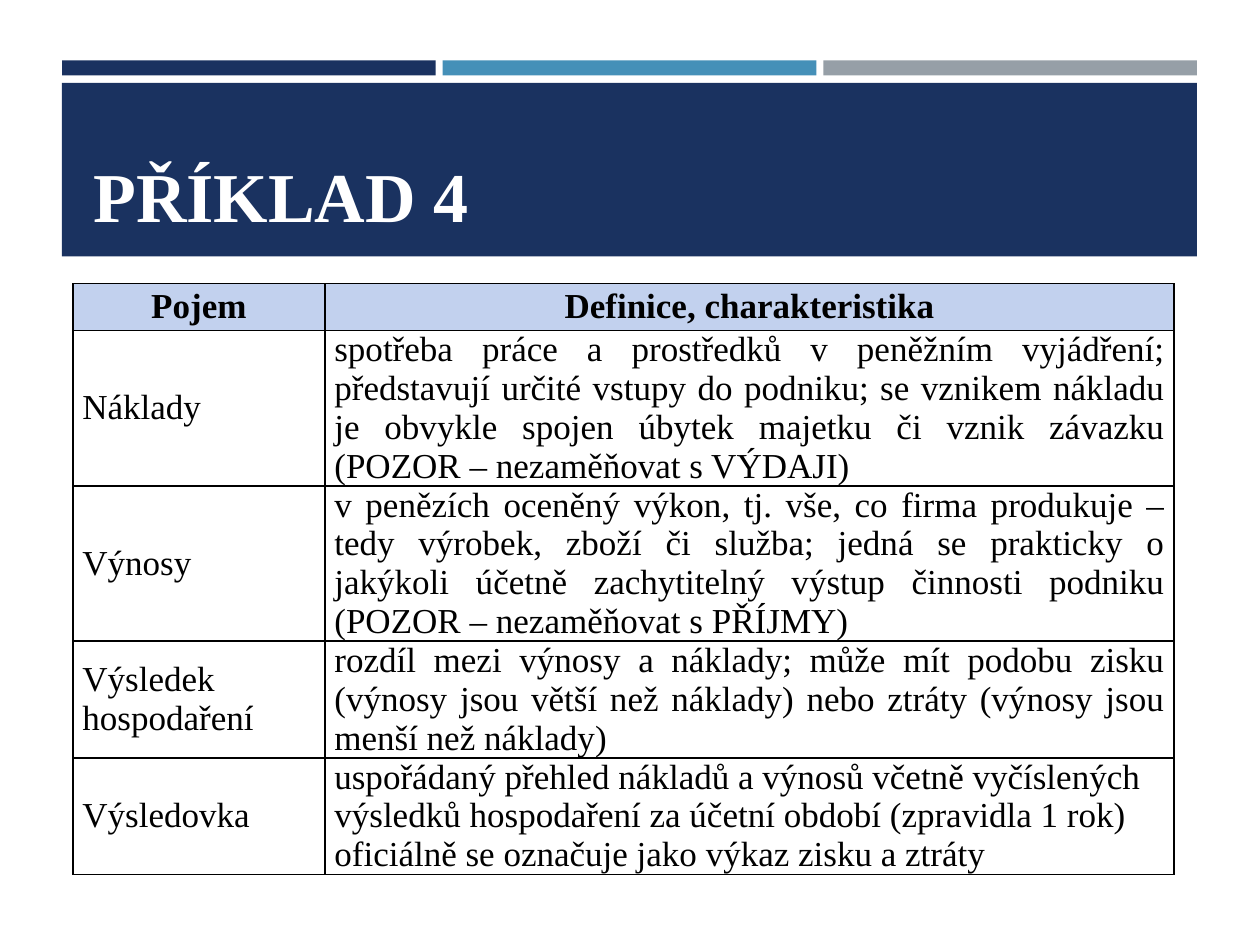
from pptx import Presentation
from pptx.util import Cm, Pt
from pptx.dml.color import RGBColor
from pptx.enum.shapes import MSO_SHAPE
from pptx.enum.text import PP_ALIGN, MSO_ANCHOR, MSO_AUTO_SIZE
from pptx.oxml import parse_xml
from pptx.oxml.ns import nsdecls

NAVY = RGBColor(0x1A, 0x32, 0x60)
BLUE = RGBColor(0x45, 0x90, 0xB8)
GREY = RGBColor(0x96, 0x9F, 0xA7)
PALE = RGBColor(0xC2, 0xD1, 0xEE)
WHITE = RGBColor(0xFF, 0xFF, 0xFF)
BLACK = RGBColor(0, 0, 0)
FONT = "Times New Roman"

# Content
TITLE = "PŘÍKLAD 4"
HEAD = ("Pojem", "Definice, charakteristika")
TERMS = [
    ("Náklady",
     "spotřeba práce a prostředků v peněžním vyjádření; představují určité "
     "vstupy do podniku; se vznikem nákladu je obvykle spojen úbytek majetku "
     "či vznik závazku (POZOR – nezaměňovat s VÝDAJI)"),
    ("Výnosy",
     "v penězích oceněný výkon, tj. vše, co firma produkuje – tedy výrobek, "
     "zboží či služba; jedná se prakticky o jakýkoli účetně zachytitelný "
     "výstup činnosti podniku (POZOR – nezaměňovat s PŘÍJMY)"),
    ("Výsledek hospodaření",
     "rozdíl mezi výnosy a náklady; může mít podobu zisku (výnosy jsou větší "
     "než náklady) nebo ztráty (výnosy jsou menší než náklady)"),
    ("Výsledovka",
     "uspořádaný přehled nákladů a výnosů včetně vyčíslených výsledků "
     "hospodaření za účetní období (zpravidla 1 rok)\n"
     "oficiálně se označuje jako výkaz zisku a ztráty"),
]
WIDTHS = (5.08, 17.12)
HEAD_H, ROW_H = 0.94, 1.98

# Banner grid
LEFT, WIDE, GAP = 1.25, 22.88, 0.14
BAR = (WIDE - 2 * GAP) / 3


def style(par, size, color, bold):
    for run in par.runs:
        font = run.font
        font.name, font.size, font.bold = FONT, Pt(size), bold
        font.color.rgb = color


def add_bar(slide, left, top, width, height, color):
    bar = slide.shapes.add_shape(
        MSO_SHAPE.RECTANGLE, Cm(left), Cm(top), Cm(width), Cm(height))
    bar.shadow.inherit = False
    bar.fill.solid()
    bar.fill.fore_color.rgb = color
    bar.line.fill.background()


def add_edges(cell):
    props = cell._tc.get_or_add_tcPr()
    for spot, side in enumerate(("lnL", "lnR", "lnT", "lnB")):
        props.insert(spot, parse_xml(
            f'<a:{side} {nsdecls("a")} w="12700"><a:solidFill>'
            f'<a:srgbClr val="{BLACK}"/></a:solidFill></a:{side}>'))


def fill_cell(cell, text, head, align):
    cell.margin_left = cell.margin_right = Cm(0.19)
    cell.margin_top = cell.margin_bottom = 0
    cell.vertical_anchor = MSO_ANCHOR.MIDDLE
    if head:
        cell.fill.solid()
        cell.fill.fore_color.rgb = PALE
    else:
        cell.fill.background()
    add_edges(cell)
    cell.text_frame.text = text
    pars = cell.text_frame.paragraphs
    for par in pars:
        par.alignment = align
        if len(pars) == 1:
            par.space_before = par.space_after = Pt(6)
        style(par, 20, BLACK, head)


def main():
    deck = Presentation()
    deck.slide_width, deck.slide_height = Cm(25.4), Cm(19.05)
    slide = deck.slides.add_slide(deck.slide_layouts[5])

    # Banner
    for i, color in enumerate((NAVY, BLUE, GREY)):
        add_bar(slide, LEFT + i * (BAR + GAP), 1.22, BAR, 0.3, color)
    add_bar(slide, LEFT, 1.67, WIDE, 3.5, NAVY)

    # Title, in front of the banner
    title = slide.shapes.title
    slide.shapes._spTree.append(title._element)
    title.left, title.top = Cm(1.63), Cm(1.9)
    title.width, title.height = Cm(22.2), Cm(3)
    frame = title.text_frame
    frame.text = TITLE
    frame.auto_size = MSO_AUTO_SIZE.NONE
    frame.vertical_anchor = MSO_ANCHOR.BOTTOM
    frame.paragraphs[0].alignment = PP_ALIGN.LEFT
    style(frame.paragraphs[0], 40, WHITE, True)

    # Table of terms
    rows = [HEAD] + TERMS
    table = slide.shapes.add_table(
        len(rows), len(HEAD), Cm(1.47), Cm(5.72), Cm(sum(WIDTHS)),
        Cm(HEAD_H + ROW_H * len(TERMS))).table
    table.horz_banding = False
    for col, width in zip(table.columns, WIDTHS):
        col.width = Cm(width)
    for r, row in enumerate(rows):
        table.rows[r].height = Cm(ROW_H if r else HEAD_H)
        for c, text in enumerate(row):
            if r == 0:
                align = PP_ALIGN.CENTER
            elif c == 0 or "\n" in text:
                align = PP_ALIGN.LEFT
            else:
                align = PP_ALIGN.JUSTIFY
            fill_cell(table.cell(r, c), text, r == 0, align)

    deck.save("out.pptx")


if __name__ == "__main__":
    main()
